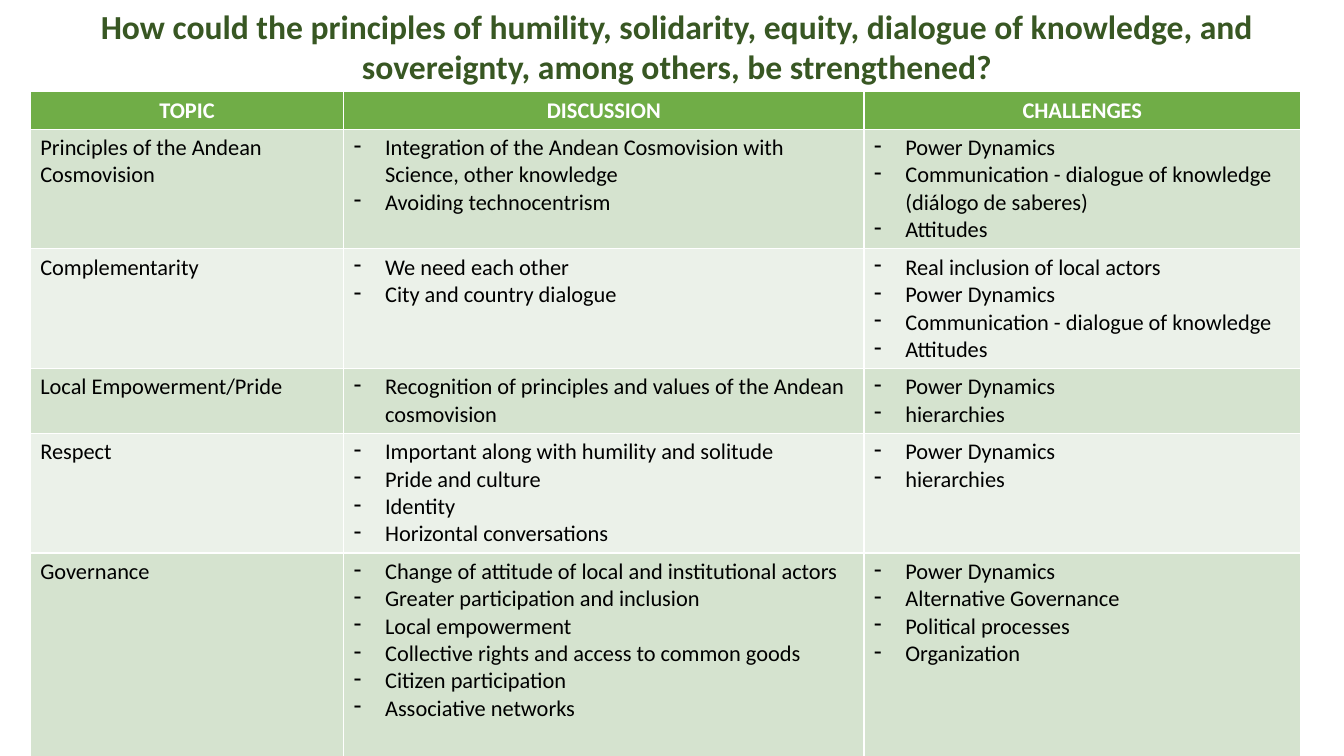
"""Build a slide with a table of principles, their discussion and their challenges."""
from lxml.etree import SubElement
from pptx import Presentation
from pptx.dml.color import RGBColor
from pptx.enum.text import MSO_ANCHOR, PP_ALIGN
from pptx.oxml.ns import qn
from pptx.util import Inches, Pt


def style(p, size, color, bold):
    for r in p.runs:
        r.font.name = "Calibri"
        r.font.size = Pt(size)
        r.font.bold = bold
        r.font.color.rgb = RGBColor.from_string(color)


def add_dash(p):
    pPr = p._p.get_or_add_pPr()
    pPr.set("marL", str(Inches(0.31)))
    pPr.set("indent", str(-Inches(0.31)))
    SubElement(pPr, qn("a:buChar")).set("char", "-")


HEADINGS = ["TOPIC", "DISCUSSION", "CHALLENGES"]
COL_WIDTHS = [3.11, 5.16, 4.33]
HEADER_FILL = "70AD47"
BAND_FILLS = ["D5E3CF", "EBF1E9"]
PADDING, LINE = 0.09, 0.27
TOPICS = [
    (4, "Principles of the Andean Cosmovision",
     ["Integration of the Andean Cosmovision with Science, other knowledge",
      "Avoiding technocentrism"],
     ["Power Dynamics",
      "Communication - dialogue of knowledge (diálogo de saberes)",
      "Attitudes"]),
    (4, "Complementarity",
     ["We need each other", "City and country dialogue"],
     ["Real inclusion of local actors", "Power Dynamics",
      "Communication - dialogue of knowledge", "Attitudes"]),
    (2, "Local Empowerment/Pride",
     ["Recognition of principles and values of the Andean cosmovision"],
     ["Power Dynamics", "hierarchies"]),
    (4, "Respect",
     ["Important along with humility and solitude", "Pride and culture",
      "Identity", "Horizontal conversations"],
     ["Power Dynamics", "hierarchies"]),
    (7.5, "Governance",
     ["Change of attitude of local and institutional actors",
      "Greater participation and inclusion", "Local empowerment",
      "Collective rights and access to common goods",
      "Citizen participation", "Associative networks"],
     ["Power Dynamics", "Alternative Governance", "Political processes",
      "Organization"]),
]

prs = Presentation()
prs.slide_width, prs.slide_height = Inches(13.33), Inches(7.5)
s = prs.slides.add_slide(prs.slide_layouts[5])

title = s.shapes.title
title.left, title.top = Inches(0.53), 0
title.width, title.height = Inches(12.37), Inches(0.91)
tf = title.text_frame
tf.text = ("How could the principles of humility, solidarity, equity, dialogue of "
           "knowledge, and sovereignty, among others, be strengthened?")
tf.word_wrap = True
tf.vertical_anchor = MSO_ANCHOR.MIDDLE
tf.paragraphs[0].alignment = PP_ALIGN.CENTER
style(tf.paragraphs[0], 24, "385723", True)

line_counts = [1] + [topic[0] for topic in TOPICS]
heights = [PADDING + LINE * count for count in line_counts]
table = s.shapes.add_table(len(heights), len(COL_WIDTHS), Inches(0.3), Inches(0.91),
                           Inches(sum(COL_WIDTHS)), Inches(sum(heights))).table
for column, width in zip(table.columns, COL_WIDTHS):
    column.width = Inches(width)
for row, height in zip(table.rows, heights):
    row.height = Inches(height)

for c, heading in enumerate(HEADINGS):
    cell = table.cell(0, c)
    cell.text_frame.text = heading
    cell.fill.solid()
    cell.fill.fore_color.rgb = RGBColor.from_string(HEADER_FILL)
    p = cell.text_frame.paragraphs[0]
    p.alignment = PP_ALIGN.CENTER
    style(p, 16, "FFFFFF", True)

for i, (_, topic, discussion, challenges) in enumerate(TOPICS):
    for c, items in enumerate([[topic], discussion, challenges]):
        cell = table.cell(i + 1, c)
        cell.text_frame.text = "\n".join(items)
        cell.fill.solid()
        cell.fill.fore_color.rgb = RGBColor.from_string(BAND_FILLS[i % 2])
        for p in cell.text_frame.paragraphs:
            style(p, 16, "000000", False)
            if c > 0:
                add_dash(p)

prs.save("out.pptx")
